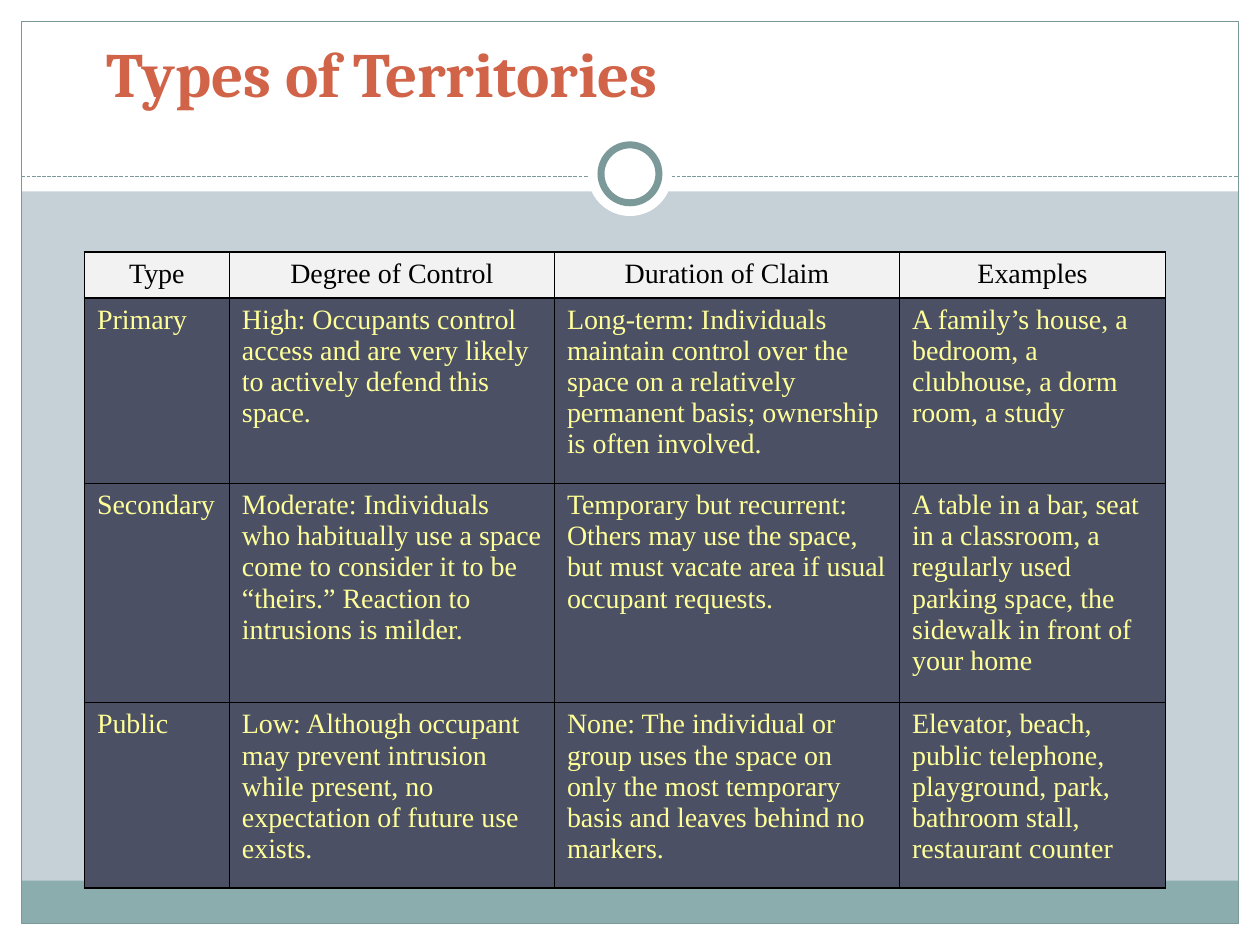
from lxml.etree import SubElement
from pptx import Presentation
from pptx.dml.color import RGBColor
from pptx.enum.dml import MSO_LINE
from pptx.enum.shapes import MSO_CONNECTOR, MSO_SHAPE
from pptx.enum.text import MSO_ANCHOR, PP_ALIGN
from pptx.oxml.ns import qn
from pptx.util import Inches, Pt

COLORS = {
    "backdrop": "C5D1D7", "white": "FFFFFF", "band": "8CADAE", "frame": "7C999A",
    "title": "D16349", "header": "F2F2F2", "body": "4B5064",
    "black": "000000", "yellow": "FFFF99",
}
TITLE = "Types of Territories"
HEADERS = ["Type", "Degree of Control", "Duration of Claim", "Examples"]
TERRITORIES = [
    ["Primary",
     "High: Occupants control access and are very likely to actively defend this space.",
     "Long-term: Individuals maintain control over the space on a relatively permanent "
     "basis; ownership is often involved.",
     "A family’s house, a bedroom, a clubhouse, a dorm room, a study"],
    ["Secondary",
     "Moderate: Individuals who habitually use a space come to consider it to be "
     "“theirs.” Reaction to intrusions is milder.",
     "Temporary but recurrent: Others may use the space, but must vacate area if usual "
     "occupant requests.",
     "A table in a bar, seat in a classroom, a regularly used parking space, the "
     "sidewalk in front of your home"],
    ["Public",
     "Low: Although occupant may prevent intrusion while present, no expectation of "
     "future use exists.",
     "None: The individual or group uses the space on only the most temporary basis "
     "and leaves behind no markers.",
     "Elevator, beach, public telephone, playground, park, bathroom stall, "
     "restaurant counter"],
]
COLUMN_WIDTHS = [1.15, 2.58, 2.74, 2.11]
ROW_HEIGHTS = [0.34, 1.47, 1.74, 1.47]

WIDTH, HEIGHT, MARGIN = 10, 7.5, 0.17
INNER_WIDTH, INNER_HEIGHT = WIDTH - 2 * MARGIN, HEIGHT - 2 * MARGIN
RING_X, RING_Y = WIDTH / 2, 1.38
TITLE_FONT = {"name": "Cambria", "size": Pt(36), "bold": True}
TABLE_FONT = {"name": "Times New Roman", "size": Pt(16), "bold": False}


def rgb(name):
    return RGBColor.from_string(COLORS[name])


def add_panel(page, kind, left, top, width, height, fill=None, line_width=None):
    panel = page.shapes.add_shape(kind, *map(Inches, (left, top, width, height)))
    panel.shadow.inherit = False
    if fill:
        panel.fill.solid()
        panel.fill.fore_color.rgb = rgb(fill)
    else:
        panel.fill.background()
    if line_width:
        panel.line.color.rgb = rgb("frame")
        panel.line.width = Pt(line_width)
    else:
        panel.line.fill.background()


def add_disc(page, size, line_width=None):
    add_panel(page, MSO_SHAPE.OVAL, RING_X - size / 2, RING_Y - size / 2,
              size, size, "white", line_width)


def write(para, text, font, color):
    span = para.add_run()
    span.text = text
    for key, value in font.items():
        setattr(span.font, key, value)
    span.font.color.rgb = rgb(color)


def add_borders(cell):
    properties = cell._tc.get_or_add_tcPr()
    for side in ("a:lnL", "a:lnR", "a:lnT", "a:lnB"):
        border = SubElement(properties, qn(side), w=str(Pt(1)))
        fill = SubElement(border, qn("a:solidFill"))
        SubElement(fill, qn("a:srgbClr"), val=COLORS["black"])


def add_frame(page):
    # Margins, header area and bottom band
    for left, top, width, height, fill in [
        (0, HEIGHT - MARGIN, WIDTH, MARGIN, "white"),
        (0, 0, WIDTH, 1.52, "white"),
        (0, 0, MARGIN, HEIGHT, "white"),
        (WIDTH - MARGIN, 0, MARGIN, HEIGHT, "white"),
        (MARGIN, 6.99, INNER_WIDTH, 0.34, "band"),
    ]:
        add_panel(page, MSO_SHAPE.RECTANGLE, left, top, width, height, fill)
    add_panel(page, MSO_SHAPE.RECTANGLE, MARGIN, MARGIN, INNER_WIDTH, INNER_HEIGHT,
              line_width=0.75)

    # Dashed divider with the ring on it
    divider = page.shapes.add_connector(
        MSO_CONNECTOR.STRAIGHT, Inches(MARGIN), Inches(1.4),
        Inches(WIDTH - MARGIN), Inches(1.4))
    divider.line.color.rgb = rgb("frame")
    divider.line.width = Pt(0.75)
    divider.line.dash_style = MSO_LINE.SQUARE_DOT
    SubElement(divider._element.spPr, qn("a:effectLst"))
    add_disc(page, 0.67)
    add_disc(page, 0.46, line_width=4)


def add_title(page):
    box = page.shapes.add_textbox(Inches(0.75), Inches(0.42), Inches(8), Inches(0.5))
    box.text_frame.word_wrap = True
    box.text_frame.vertical_anchor = MSO_ANCHOR.BOTTOM
    write(box.text_frame.paragraphs[0], TITLE, TITLE_FONT, "title")


def add_territory_table(page):
    rows = [HEADERS] + TERRITORIES
    table = page.shapes.add_table(
        len(rows), len(HEADERS), Inches(0.67), Inches(2),
        Inches(sum(COLUMN_WIDTHS)), Inches(sum(ROW_HEIGHTS))).table
    for column, width in zip(table.columns, COLUMN_WIDTHS):
        column.width = Inches(width)
    for row, height in zip(table.rows, ROW_HEIGHTS):
        row.height = Inches(height)
    for r, texts in enumerate(rows):
        is_header = r == 0
        for c, text in enumerate(texts):
            cell = table.cell(r, c)
            add_borders(cell)
            cell.fill.solid()
            cell.fill.fore_color.rgb = rgb("header" if is_header else "body")
            para = cell.text_frame.paragraphs[0]
            para.alignment = PP_ALIGN.CENTER if is_header else PP_ALIGN.LEFT
            write(para, text, TABLE_FONT, "black" if is_header else "yellow")


def main():
    deck = Presentation()
    deck.slide_width, deck.slide_height = Inches(WIDTH), Inches(HEIGHT)
    page = deck.slides.add_slide(deck.slide_layouts[6])
    page.background.fill.solid()
    page.background.fill.fore_color.rgb = rgb("backdrop")
    add_frame(page)
    add_title(page)
    add_territory_table(page)
    deck.save("out.pptx")


if __name__ == "__main__":
    main()
